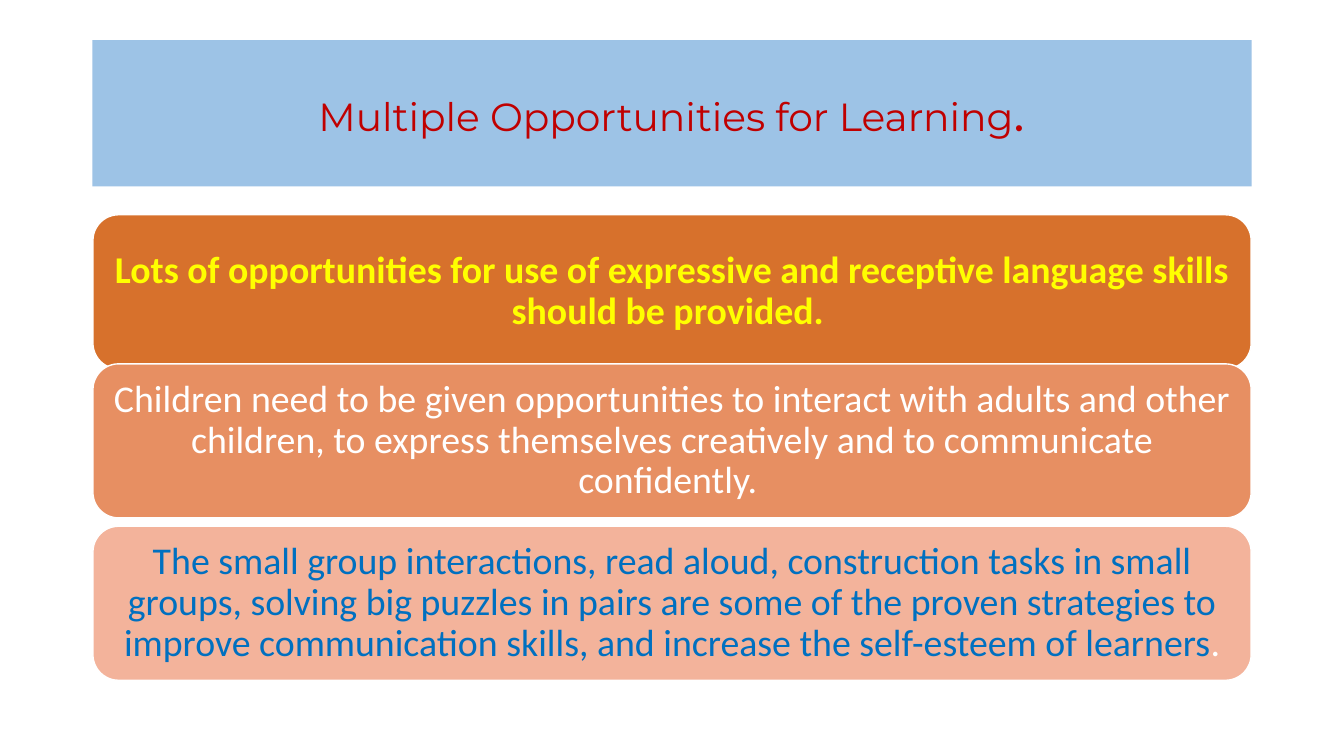
"""Builds a slide on multiple opportunities for learning."""
from dataclasses import dataclass

from pptx import Presentation
from pptx import util as u
from pptx.dml.color import RGBColor
from pptx.enum import shapes, text


@dataclass(frozen=True)
class Theme:
    banner: str = "9DC3E6"
    red: str = "C00000"
    yellow: str = "FFFF00"
    white: str = "FFFFFF"
    blue: str = "0070C0"
    panels: tuple = ("D7712C", "E78F62", "F3B39B")
    title_font: str = "Montserrat"
    body_font: str = "Calibri"
    title_size: int = 28
    stop_size: int = 40
    body_size: int = 27


def fill_shape(shape, color):
    shape.fill.solid()
    shape.fill.fore_color.rgb = RGBColor.from_string(color)


def format_text(shape, font, size, color):
    frame = shape.text_frame
    frame.word_wrap = True
    frame.auto_size = text.MSO_AUTO_SIZE.NONE
    frame.vertical_anchor = text.MSO_ANCHOR.MIDDLE
    paragraph = frame.paragraphs[0]
    paragraph.alignment = text.PP_ALIGN.CENTER
    paragraph.line_spacing = 0.9
    paragraph.font.name = font
    paragraph.font.size = u.Pt(size)
    paragraph.font.color.rgb = RGBColor.from_string(color)
    return paragraph


theme = Theme()
presentation = Presentation()
presentation.slide_width, presentation.slide_height = u.Pt(960), u.Pt(540)
slide = presentation.slides.add_slide(presentation.slide_layouts[5])

title = slide.shapes.title
title.left, title.top, title.width, title.height = map(u.Pt, (66, 28.75, 828, 104.4))
fill_shape(title, theme.banner)
paragraph = format_text(title, theme.title_font, theme.title_size, theme.red)
paragraph.add_run().text = "Multiple Opportunities for Learning"
stop = paragraph.add_run()
stop.text = "."
stop.font.size = u.Pt(theme.stop_size)

panels = [
    (153.4, theme.yellow, True,
     "Lots of opportunities for use of expressive and receptive language "
     "skills should be provided. "),
    (259.9, theme.white, False,
     "Children need to be given opportunities to interact with adults and "
     "other children, to express themselves creatively and to communicate "
     "confidently. "),
    (375.9, theme.blue, False,
     "The small group interactions, read aloud, construction tasks in small "
     "groups, solving big puzzles in pairs are some of the proven strategies "
     "to improve communication skills, and increase the self-esteem of learners"),
]
for fill, (top, color, bold, wording) in zip(theme.panels, panels):
    panel = slide.shapes.add_shape(
        shapes.MSO_SHAPE.ROUNDED_RECTANGLE, u.Pt(66.4), u.Pt(top), u.Pt(827.3), u.Pt(110))
    panel.shadow.inherit = False
    fill_shape(panel, fill)
    panel.line.color.rgb = RGBColor.from_string(theme.white)
    panel.line.width = u.Pt(1)
    frame = panel.text_frame
    frame.margin_left = frame.margin_right = u.Pt(8)
    frame.margin_top = frame.margin_bottom = u.Pt(4)
    paragraph = format_text(panel, theme.body_font, theme.body_size, color)
    paragraph.font.bold = bold
    paragraph.add_run().text = wording

stop = paragraph.add_run()
stop.text = "."
stop.font.color.rgb = RGBColor.from_string(theme.white)

presentation.save("out.pptx")
